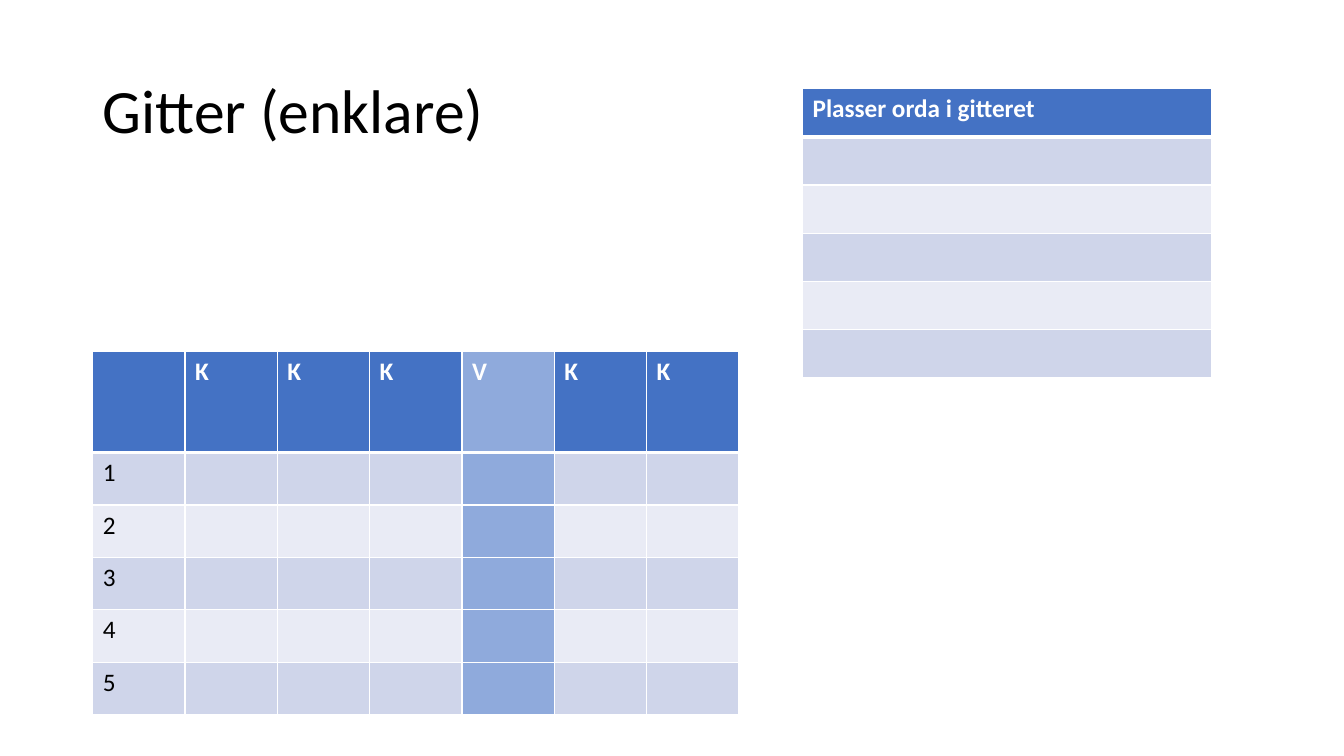
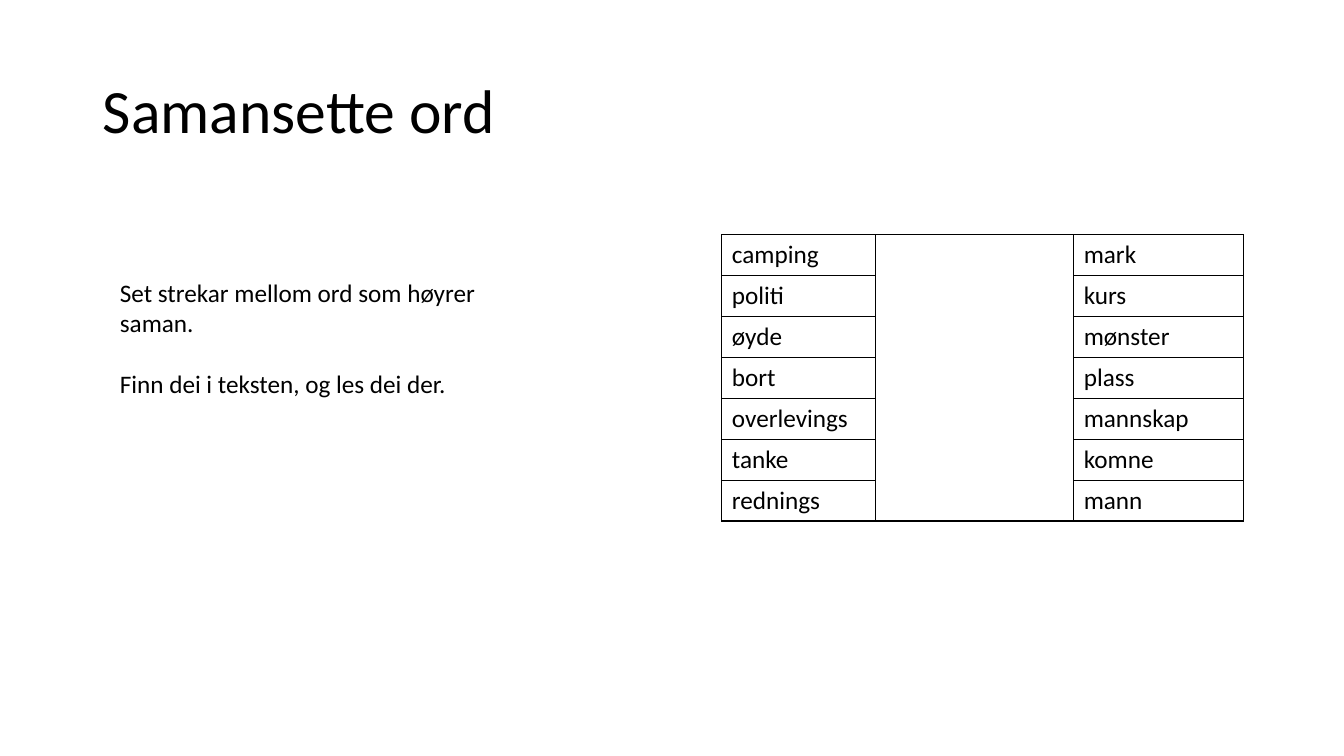
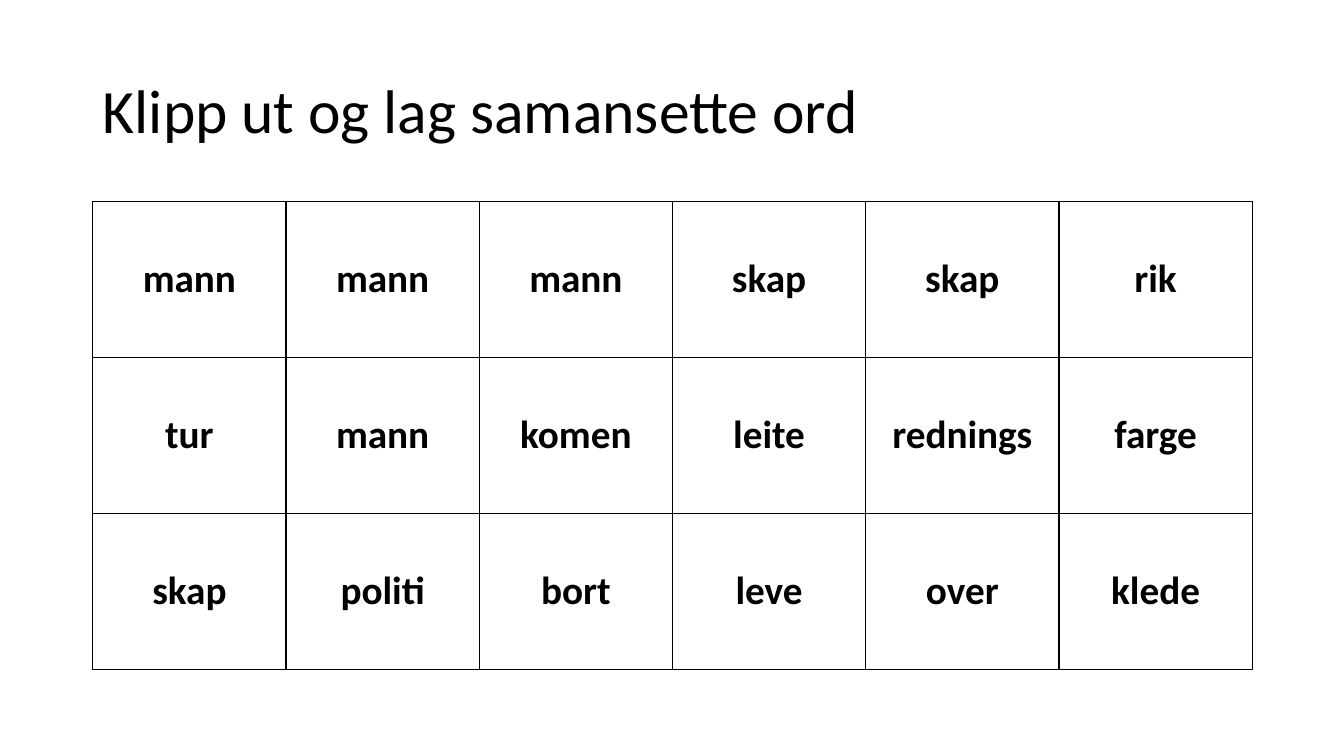
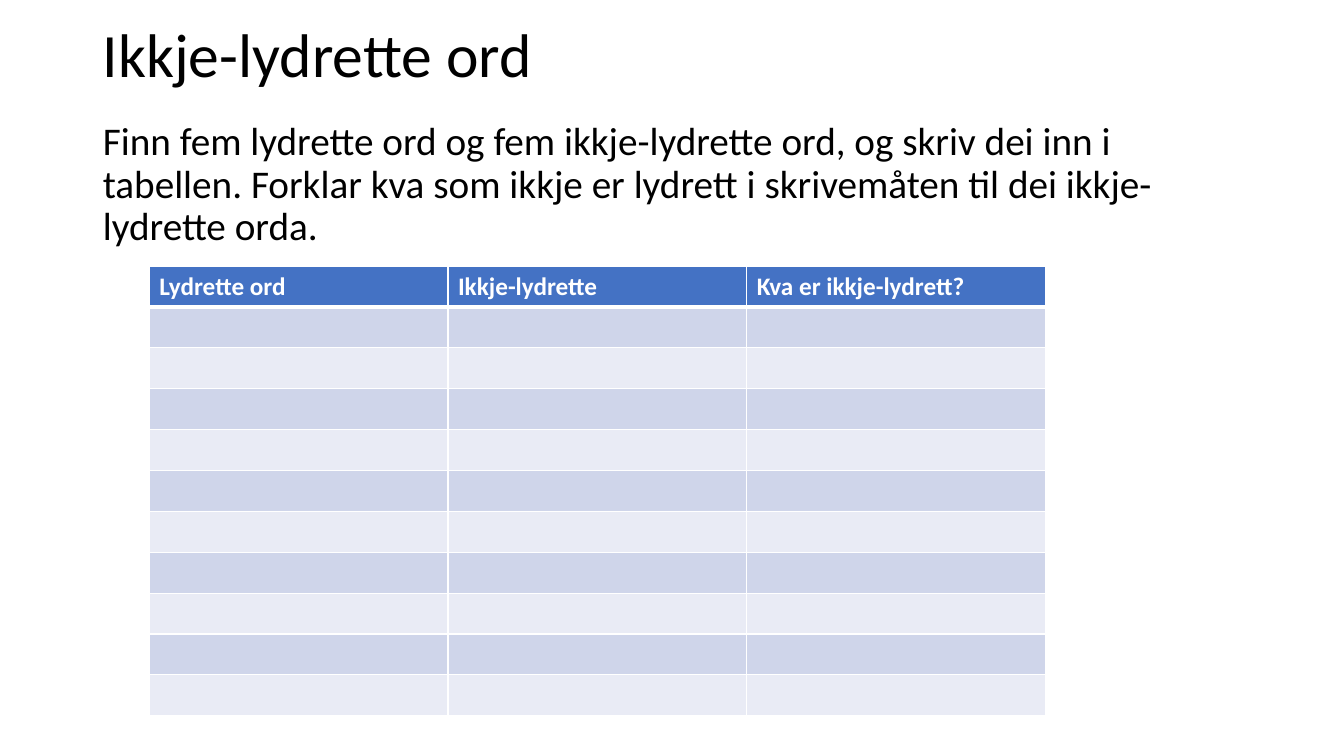
import pptx
import pptx.dml.color
import pptx.enum.text
import pptx.oxml.ns
import pptx.util
from lxml import etree

Inches = pptx.util.Inches
Pt = pptx.util.Pt
ALIGN = pptx.enum.text.PP_ALIGN
ANCHOR = pptx.enum.text.MSO_ANCHOR
COLORS = {
    "ink": "000000",
    "paper": "FFFFFF",
    "header": "4472C4",
    "vowel": "8FAADC",
    "odd": "CFD5EA",
    "even": "E9EBF5",
}
FONT = "Calibri"
MARGIN = 0.92
CONTENT_WIDTH = 11.5
TITLE_ONLY, TITLE_AND_BODY = 5, 1


def rgb(name):
    return pptx.dml.color.RGBColor.from_string(COLORS[name])


def write(frame, *paragraphs, size=18, color="ink", bold=False, align=ALIGN.LEFT,
          anchor=ANCHOR.TOP, line_spacing=1.0, before=0):
    """Fill a text frame; before is the space in points above each paragraph."""
    frame.word_wrap = True
    frame.vertical_anchor = anchor
    for index, words in enumerate(paragraphs):
        paragraph = frame.add_paragraph() if index else frame.paragraphs[0]
        paragraph.alignment = align
        paragraph.line_spacing = line_spacing
        paragraph.space_before = Pt(before if index else 0)
        run = paragraph.add_run()
        run.text = words
        run.font.name = FONT
        run.font.size = Pt(size)
        run.font.bold = bold
        run.font.color.rgb = rgb(color)


def draw_borders(cell, color, top=1, bottom=1):
    """Give a cell solid borders, with widths in points."""
    properties = cell._tc.get_or_add_tcPr()
    for side, width in (("L", 1), ("R", 1), ("T", top), ("B", bottom)):
        line = etree.SubElement(properties, pptx.oxml.ns.qn("a:ln" + side), w=str(Pt(width)))
        fill = etree.SubElement(line, pptx.oxml.ns.qn("a:solidFill"))
        etree.SubElement(fill, pptx.oxml.ns.qn("a:srgbClr"), val=COLORS[color])


class Deck:
    def __init__(self):
        self.presentation = pptx.Presentation()
        self.presentation.slide_width = Inches(13.33)
        self.presentation.slide_height = Inches(7.5)
        self.slide = None

    def add_slide(self, title, layout=TITLE_ONLY, top=0.4):
        self.slide = self.presentation.slides.add_slide(
            self.presentation.slide_layouts[layout])
        self.fill_placeholder(self.slide.shapes.title, title, top, 1.45,
                              size=44, anchor=ANCHOR.MIDDLE)

    def fill_placeholder(self, holder, words, top, height, **style):
        holder.left, holder.top = Inches(MARGIN), Inches(top)
        holder.width, holder.height = Inches(CONTENT_WIDTH), Inches(height)
        holder.text_frame.auto_size = pptx.enum.text.MSO_AUTO_SIZE.NONE
        write(holder.text_frame, words, line_spacing=0.9, **style)

    def body(self, words, top, height):
        holder = self.slide.placeholders[1]
        self.fill_placeholder(holder, words, top, height, size=28)
        properties = holder.text_frame.paragraphs[0]._p.get_or_add_pPr()
        properties.set("marL", "0")
        properties.set("indent", "0")
        etree.SubElement(properties, pptx.oxml.ns.qn("a:buNone"))

    def note(self, left, top, width, height, *paragraphs, **style):
        box = self.slide.shapes.add_textbox(
            Inches(left), Inches(top), Inches(width), Inches(height))
        write(box.text_frame, *paragraphs, **style)

    def table(self, left, top, widths, heights):
        table = self.slide.shapes.add_table(
            len(heights), len(widths), Inches(left), Inches(top),
            Inches(sum(widths)), Inches(sum(heights))).table
        table.first_row = table.horz_banding = False
        for column, width in zip(table.columns, widths):
            column.width = Inches(width)
        for row, height in zip(table.rows, heights):
            row.height = Inches(height)
        return table

    def banded_table(self, left, top, widths, heights, rows, vowel_column=None):
        """Add a table with a blue header; rows missing from the texts stay empty."""
        table = self.table(left, top, widths, heights)
        for r in range(len(heights)):
            texts = rows[r] if r < len(rows) else []
            band = "header" if r == 0 else "odd" if r % 2 else "even"
            for c in range(len(widths)):
                cell = table.cell(r, c)
                draw_borders(cell, "paper", top=3 if r == 1 else 1, bottom=1 if r else 3)
                cell.fill.solid()
                cell.fill.fore_color.rgb = rgb("vowel" if c == vowel_column else band)
                if c < len(texts) and texts[c]:
                    write(cell.text_frame, texts[c], bold=r == 0,
                          color="ink" if r else "paper")

    def outlined_table(self, left, top, widths, heights, rows,
                       anchor=ANCHOR.TOP, **style):
        table = self.table(left, top, widths, heights)
        for r, texts in enumerate(rows):
            for c, words in enumerate(texts):
                cell = table.cell(r, c)
                draw_borders(cell, "ink")
                cell.fill.background()
                cell.vertical_anchor = anchor
                if words:
                    write(cell.text_frame, words, anchor=anchor, **style)
        return table


def main():
    deck = Deck()

    deck.add_slide("Gitter (enklare)")
    letters = ["", "K", "K", "K", "V", "K", "K"]
    numbers = [[str(number)] for number in range(1, 6)]
    deck.banded_table(MARGIN, 3.49, [6.41 / 7] * 7, [1] + [0.52] * 5,
                      [letters] + numbers, vowel_column=letters.index("V"))
    deck.banded_table(7.96, 0.88, [4.06], [2.87 / 6] * 6, [["Plasser orda i gitteret"]])

    deck.add_slide("Samansette ord")
    word_parts = [
        ("camping", "mark"), ("politi", "kurs"), ("øyde", "mønster"), ("bort", "plass"),
        ("overlevings", "mannskap"), ("tanke", "komne"), ("rednings", "mann"),
    ]
    matching = deck.outlined_table(7.16, 2.33, [1.52, 1.97, 1.68], [2.84 / 7] * 7,
                                   [(first, "", last) for first, last in word_parts])
    matching.cell(0, 1).merge(matching.cell(len(word_parts) - 1, 1))
    deck.note(1.09, 2.7, 4.05, 1.31, "Set strekar mellom ord som høyrer saman.",
              "Finn dei i teksten, og les dei der.", before=22)

    deck.add_slide("Klipp ut og lag samansette ord")
    cards = [
        ["mann", "mann", "mann", "skap", "skap", "rik"],
        ["tur", "mann", "komen", "leite", "rednings", "farge"],
        ["skap", "politi", "bort", "leve", "over", "klede"],
    ]
    deck.outlined_table(MARGIN, 2, [CONTENT_WIDTH / 6] * 6, [4.64 / 3] * 3, cards,
                        size=28, bold=True, align=ALIGN.CENTER, anchor=ANCHOR.MIDDLE)

    deck.add_slide("Ikkje-lydrette ord", TITLE_AND_BODY, top=-0.15)
    deck.body("Finn fem lydrette ord og fem ikkje-lydrette ord, og skriv dei inn i tabellen. "
              "Forklar kva som ikkje er lydrett i skrivemåten til dei ikkje-lydrette orda.",
              1.16, 4.76)
    deck.banded_table(1.48, 2.64, [8.89 / 3] * 3, [4.46 / 11] * 11,
                      [["Lydrette ord", "Ikkje-lydrette", "Kva er ikkje-lydrett?"]])

    deck.presentation.save("out.pptx")


if __name__ == "__main__":
    main()
